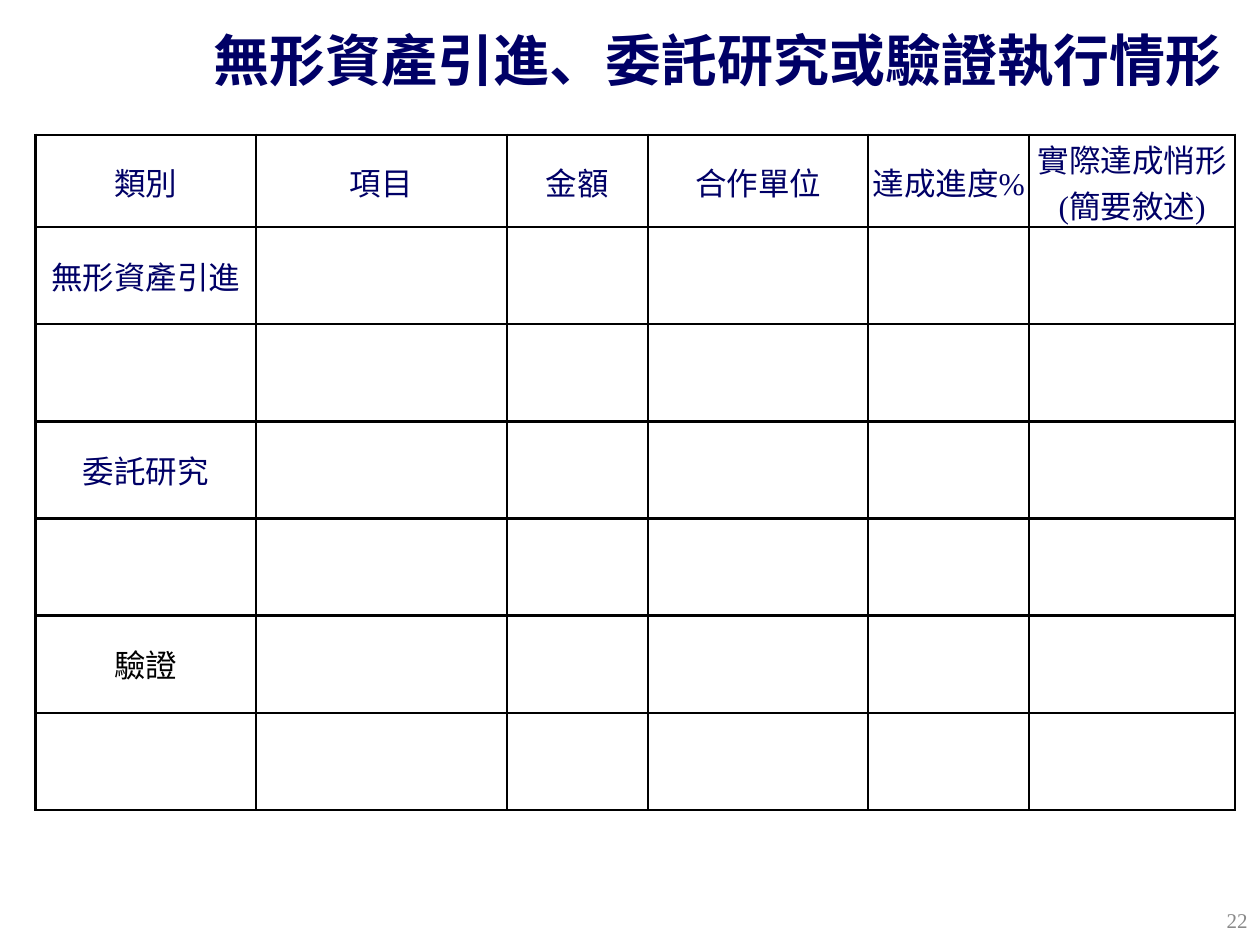
"""Build the slide on intangible assets, commissioned research and verification."""
from lxml.etree import SubElement as Sub
from pptx import Presentation
from pptx.dml.color import RGBColor
from pptx.enum.text import MSO_ANCHOR as Anchor, MSO_AUTO_SIZE as Fit, PP_ALIGN as Align
from pptx.oxml.ns import qn
from pptx.util import Pt

NAVY = RGBColor(0x00, 0x00, 0x66)
BLACK = RGBColor(0x00, 0x00, 0x00)
WHITE = RGBColor(0xFF, 0xFF, 0xFF)
GRAY = RGBColor(0x89, 0x89, 0x89)
FACE = "Times New Roman"


def write(frame, lines, size, color, align=Align.CENTER, bold=False):
    for i, line in enumerate(lines):
        para = frame.add_paragraph() if i else frame.paragraphs[0]
        para.alignment = align
        run = para.add_run()
        run.text = line
        font = run.font
        font.name, font.size, font.bold = FACE, Pt(size), bold
        font.color.rgb = color


def frame_cell(cell):
    props = cell._tc.get_or_add_tcPr()
    for i, side in enumerate(("lnL", "lnR", "lnT", "lnB")):
        line = props.makeelement(qn(f"a:{side}"), {"w": str(Pt(1.5))})
        fill = Sub(line, qn("a:solidFill"))
        Sub(fill, qn("a:srgbClr"), val=str(BLACK))
        props.insert(i, line)


deck = Presentation()
deck.slide_width, deck.slide_height = Pt(720), Pt(540)
slide = deck.slides.add_slide(deck.slide_layouts[5])

title = slide.shapes.title
title.left, title.top, title.width, title.height = Pt(86.4), Pt(5), Pt(648), Pt(57)
title.text_frame.auto_size = Fit.NONE
title.text_frame.vertical_anchor = Anchor.MIDDLE
write(title.text_frame, ["無形資產引進、委託研究或驗證執行情形"], 32, NAVY, bold=True)

heads = [["類別"], ["項目"], ["金額"], ["合作單位"], ["達成進度%"],
         ["實際達成悄形", "(簡要敘述)"]]
kinds = {1: ("無形資產引進", NAVY), 3: ("委託研究", NAVY), 5: ("驗證", BLACK)}
widths = [126, 143.5, 80.5, 126, 92, 117.5]
heights = [45.5] + [55.5] * 6

grid = slide.shapes.add_table(len(heights), len(widths), Pt(20.2), Pt(77),
                              Pt(sum(widths)), Pt(sum(heights))).table
grid.first_row = grid.horz_banding = False
for col, width in zip(grid.columns, widths):
    col.width = Pt(width)
for row, height in zip(grid.rows, heights):
    row.height = Pt(height)

for cell in grid.iter_cells():
    cell.fill.solid()
    cell.fill.fore_color.rgb = WHITE
    cell.vertical_anchor = Anchor.MIDDLE
    frame_cell(cell)

for i, lines in enumerate(heads):
    cell = grid.cell(0, i)
    cell.margin_left = cell.margin_right = cell.margin_top = Pt(0.75)
    cell.margin_bottom = Pt(0)
    write(cell.text_frame, lines, 18, NAVY)
for i, (kind, color) in kinds.items():
    write(grid.cell(i, 0).text_frame, [kind], 18, color)

number = slide.shapes.add_textbox(Pt(552), Pt(511), Pt(168), Pt(29)).text_frame
number.word_wrap = True
number.vertical_anchor = Anchor.MIDDLE
write(number, ["22"], 12, GRAY, Align.RIGHT)

deck.save("out.pptx")
